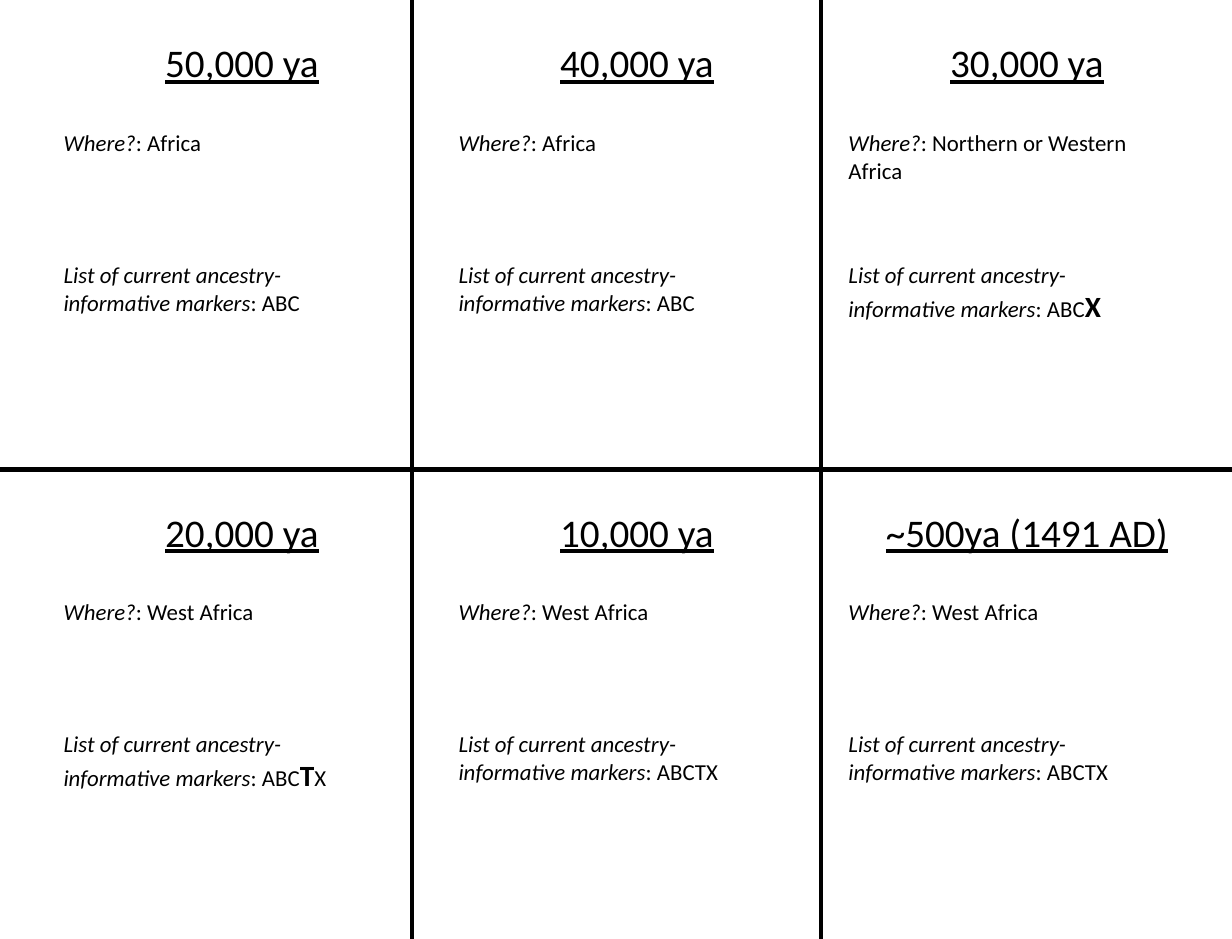
from pptx import Presentation
from pptx.dml.color import RGBColor
from pptx.enum.shapes import MSO_CONNECTOR
from pptx.enum.text import MSO_AUTO_SIZE, PP_ALIGN
from pptx.oxml.ns import qn
from pptx.util import Inches, Pt
from lxml import etree

LINE = MSO_CONNECTOR.STRAIGHT
GROW = MSO_AUTO_SIZE.SHAPE_TO_FIT_TEXT
LEFT = PP_ALIGN.LEFT
CENTER = PP_ALIGN.CENTER
BLACK = RGBColor(0, 0, 0)

WIDE, HIGH = Inches(10.5), Inches(8)
SCALE = WIDE / 1232
LEFTS = [52, 447, 837]
ROW = 469
RULES = [(0, ROW, 1232, ROW), (412, 0, 412, 939), (821, 0, 821, 939)]

BASE = {"name": "Calibri", "size": Pt(14)}
HEAD = {"name": "Calibri", "size": Pt(24), "underline": True}
LABEL = {**BASE, "italic": True}
NEW = {**BASE, "size": Pt(18), "bold": True}

ERAS = [
    ("50,000 ya", "Africa", 40, ("ABC", "", ""), 67),
    ("40,000 ya", "Africa", 40, ("ABC", "", ""), 67),
    ("30,000 ya", "Northern or Western Africa", 67, ("ABC", "X", ""), 75),
    ("20,000 ya", "West Africa", 40, ("ABC", "T", "X"), 75),
    ("10,000 ya", "West Africa", 40, ("ABCTX", "", ""), 67),
    ("~500ya (1491 AD)", "West Africa", 40, ("ABCTX", "", ""), 67),
]


def px(n):
    return round(n * SCALE)


def add_rule(slide, ends):
    rule = slide.shapes.add_connector(LINE, *map(px, ends))
    rule.line.color.rgb = BLACK
    rule.line.width = Pt(3)
    etree.SubElement(rule.element.spPr, qn("a:effectLst"))


def add_text(slide, area, parts, align=LEFT):
    box = slide.shapes.add_textbox(*map(px, area))
    frame = box.text_frame
    frame.word_wrap = True
    frame.auto_size = GROW
    para = frame.paragraphs[0]
    para.alignment = align
    for text, style in parts:
        if text:
            run = para.add_run()
            run.text = text
            run.font.color.rgb = BLACK
            for key, value in style.items():
                setattr(run.font, key, value)


def add_era(slide, left, top, era):
    title, place, tall, (old, new, rest), deep = era
    add_text(slide, (left, top + 33, 380, 59), [(title, HEAD)], CENTER)
    add_text(slide, (left, top + 123, 334, tall),
             [("Where?", LABEL), (": " + place, BASE)])
    add_text(slide, (left, top + 255, 334, deep),
             [("List of current ancestry-informative markers", LABEL),
              (": " + old, BASE), (new, NEW), (rest, BASE)])


def main():
    deck = Presentation()
    deck.slide_width, deck.slide_height = WIDE, HIGH
    slide = deck.slides.add_slide(deck.slide_layouts[6])
    for ends in RULES:
        add_rule(slide, ends)
    for i, era in enumerate(ERAS):
        row, col = divmod(i, len(LEFTS))
        add_era(slide, LEFTS[col], row * ROW, era)
    deck.save("out.pptx")


if __name__ == "__main__":
    main()
